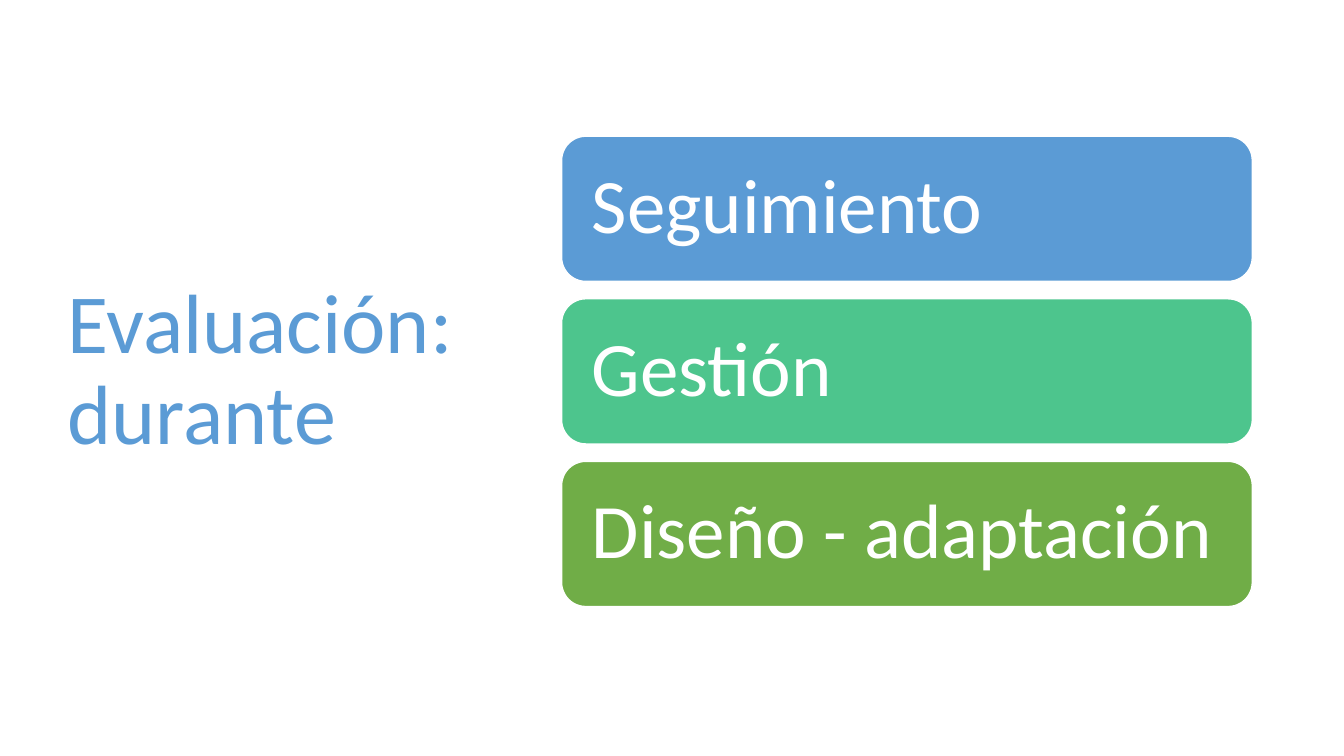
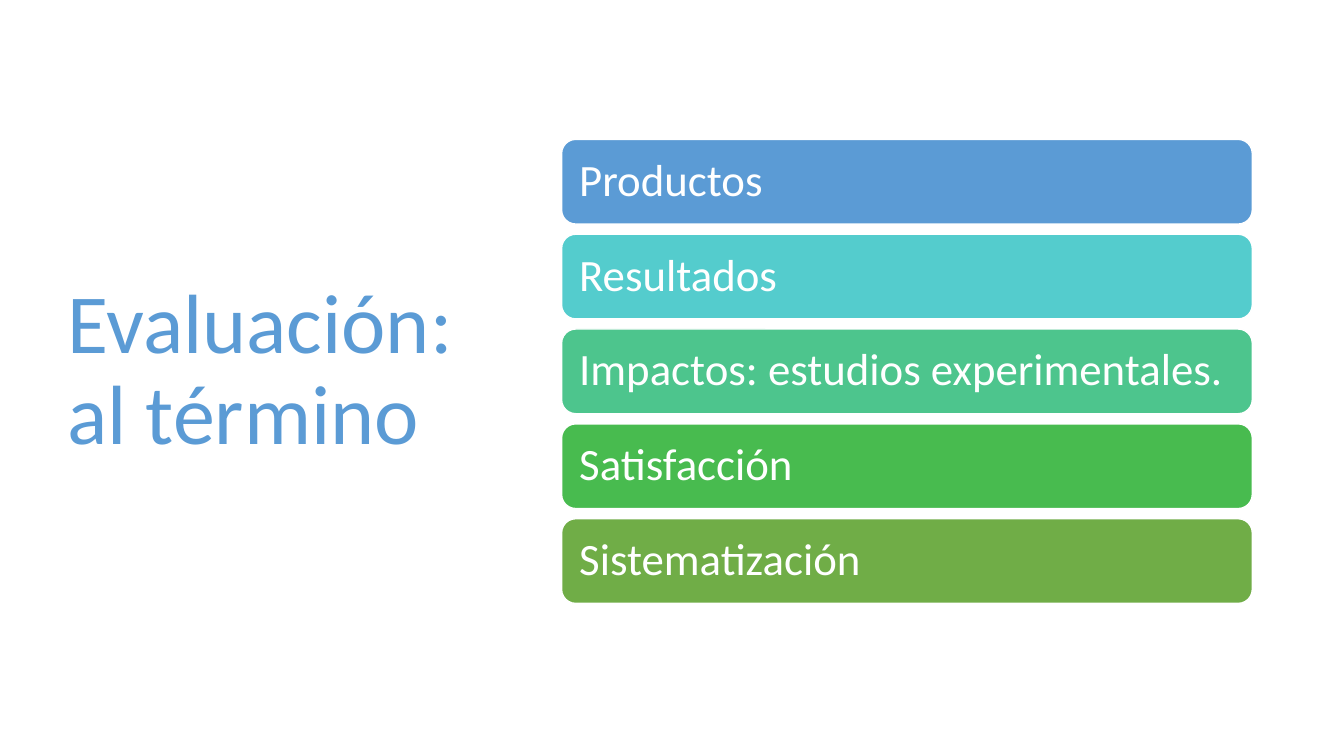
from pptx import Presentation
from pptx.dml.color import RGBColor
from pptx.enum.shapes import MSO_SHAPE
from pptx.enum.text import MSO_ANCHOR, PP_ALIGN
from pptx.util import Inches, Pt

SLIDE_WIDTH = Inches(13.33)
SLIDE_HEIGHT = Inches(7.5)
FONT = "Calibri"
BLUE, TURQUOISE, MINT, GREEN, OLIVE = "5B9BD5", "54CCCD", "4DC58D", "48BB4F", "70AD47"
WHITE = "FFFFFF"

TITLE_AREA = (4.28, 9.07, 31.2, 80.27)
STACK_LEFT, STACK_WIDTH, STACK_MIDDLE = 41.79, 51.39, 49.13
GAP_TO_BAR = 0.12
INSET_TO_TEXT = 0.3

STAGES = [
    ("Evaluación: durante", 19.2, 55, [
        ("Seguimiento", BLUE),
        ("Gestión", MINT),
        ("Diseño - adaptación", OLIVE),
    ]),
    ("Evaluación: al término", 11.2, 32, [
        ("Productos", BLUE),
        ("Resultados", TURQUOISE),
        ("Impactos: estudios experimentales.", MINT),
        ("Satisfacción", GREEN),
        ("Sistematización", OLIVE),
    ]),
]


def color(hex_value):
    return RGBColor.from_string(hex_value)


def area(left, top, width, height):
    return (
        int(SLIDE_WIDTH * left / 100),
        int(SLIDE_HEIGHT * top / 100),
        int(SLIDE_WIDTH * width / 100),
        int(SLIDE_HEIGHT * height / 100),
    )


def write(frame, wording, size, hex_value):
    frame.word_wrap = True
    frame.vertical_anchor = MSO_ANCHOR.MIDDLE
    paragraph = frame.paragraphs[0]
    paragraph.text = wording
    paragraph.alignment = PP_ALIGN.LEFT
    paragraph.line_spacing = 0.9
    paragraph.font.name = FONT
    paragraph.font.size = Pt(size)
    paragraph.font.color.rgb = color(hex_value)


def add_title(slide, wording):
    title = slide.shapes.add_textbox(*area(*TITLE_AREA))
    write(title.text_frame, wording, 60, BLUE)


def add_bar(slide, top, height, wording, size, fill):
    bar = slide.shapes.add_shape(
        MSO_SHAPE.ROUNDED_RECTANGLE, *area(STACK_LEFT, top, STACK_WIDTH, height))
    bar.shadow.inherit = False
    bar.fill.solid()
    bar.fill.fore_color.rgb = color(fill)
    bar.line.color.rgb = color(WHITE)
    bar.line.width = Pt(1)
    frame = bar.text_frame
    inset = Pt(size * INSET_TO_TEXT)
    frame.margin_left = frame.margin_right = inset
    frame.margin_top = frame.margin_bottom = inset
    write(frame, wording, size, WHITE)


def add_stack(slide, bar_height, size, topics):
    gap = bar_height * GAP_TO_BAR
    pitch = bar_height + gap
    top = STACK_MIDDLE - (len(topics) * pitch - gap) / 2
    for row, (topic, fill) in enumerate(topics):
        add_bar(slide, top + row * pitch, bar_height, topic, size, fill)


def main():
    deck = Presentation()
    deck.slide_width = SLIDE_WIDTH
    deck.slide_height = SLIDE_HEIGHT
    for title, bar_height, size, topics in STAGES:
        slide = deck.slides.add_slide(deck.slide_layouts[6])
        add_title(slide, title)
        add_stack(slide, bar_height, size, topics)
    deck.save("out.pptx")


if __name__ == "__main__":
    main()
